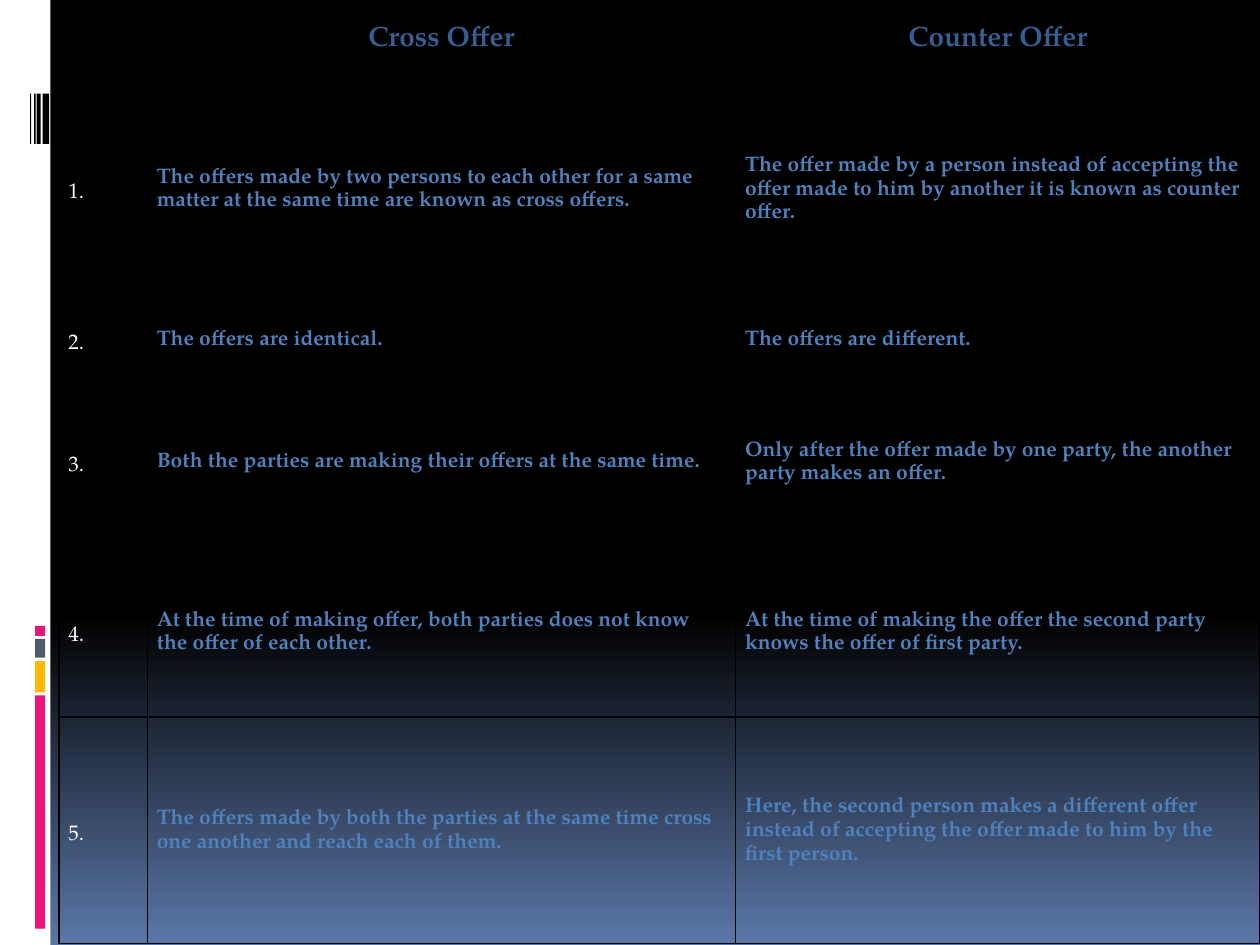
from lxml.etree import SubElement
from pptx import Presentation
from pptx.dml.color import RGBColor
from pptx.enum.shapes import MSO_SHAPE
from pptx.enum.text import MSO_ANCHOR, PP_ALIGN
from pptx.oxml.ns import qn
from pptx.util import Cm, Pt

FONT = "TeX Gyre Pagella"
COLORS = {
    "black": "000000",
    "white": "FFFFFF",
    "glow": "5B77A8",
    "pink": "EA157A",
    "amber": "FEB80A",
    "slate": "4E5B6F",
    "heading": "365F91",
    "body": "4F81BD",
}


def color(name):
    return RGBColor.from_string(COLORS[name])


def add_borders(cell):
    """Draw a 1 pt black line on every side of the cell."""
    properties = cell._tc.get_or_add_tcPr()
    for position, side in enumerate(("a:lnL", "a:lnR", "a:lnT", "a:lnB")):
        line = SubElement(properties, qn(side), w=str(Pt(1)))
        fill = SubElement(line, qn("a:solidFill"))
        SubElement(fill, qn("a:srgbClr"), val=COLORS["black"])
        properties.insert(position, line)


deck = Presentation()
deck.slide_width, deck.slide_height = Cm(25.4), Cm(19.05)
page = deck.slides.add_slide(deck.slide_layouts[6])

# Background: black down to 65 %, then fading to blue
background = page.background.fill
background.gradient()
background.gradient_angle = 270
for stop, name, position in zip(background.gradient_stops, ("black", "glow"), (0.65, 1)):
    stop.color.rgb = color(name)
    stop.position = position

# Side strip with coloured blocks and thin bars: left, top, width, height
blocks = [
    (0, 0, 1.02, 19.05, "white"),
    (0.71, 14.02, 0.2, 4.7, "pink"),
    (0.71, 13.33, 0.2, 0.63, "amber"),
    (0.71, 12.88, 0.2, 0.38, "slate"),
    (0.71, 12.62, 0.2, 0.2, "pink"),
]
bars = [(0.86, 0.13), (0.74, 0.08), (0.69, 0.03), (0.61, 0.02)]
blocks += [(left, 1.89, width, 1.01, "black") for left, width in bars]
for left, top, width, height, name in blocks:
    block = page.shapes.add_shape(
        MSO_SHAPE.RECTANGLE, Cm(left), Cm(top), Cm(width), Cm(height)
    )
    block.shadow.inherit = False
    block.fill.solid()
    block.fill.fore_color.rgb = color(name)
    block.line.fill.background()

# Comparison table
headings = ("", "Cross Offer", "Counter Offer")
comparisons = [
    ("The offers made by two persons to each other for a same matter at the same time "
     "are known as cross offers.",
     "The offer made by a person instead of accepting the offer made to him by another "
     "it is known as counter offer."),
    ("The offers are identical.", "The offers are different."),
    ("Both the parties are making their offers at the same time.",
     "Only after the offer made by one party, the another party makes an offer."),
    ("At the time of making offer, both parties does not know the offer of each other.",
     "At the time of making the offer the second party knows the offer of first party."),
    ("The offers made by both the parties at the same time cross one another and reach "
     "each of them.",
     "Here, the second person makes a different offer instead of accepting the offer "
     "made to him by the first person."),
]
rows = [headings] + [
    (f"{number}.", *pair) for number, pair in enumerate(comparisons, start=1)
]
widths = (1.78, 11.86, 10.57)
heights = (1.52, 4.57, 1.5, 3.43, 3.43, 4.57)

table = page.shapes.add_table(
    len(rows), len(widths), Cm(1.19), Cm(0), Cm(sum(widths)), Cm(sum(heights))
).table
table.first_row = table.horz_banding = False
for column, width in zip(table.columns, widths):
    column.width = Cm(width)
for row, height in zip(table.rows, heights):
    row.height = Cm(height)

for row_index, texts in enumerate(rows):
    for column_index, text in enumerate(texts):
        is_heading, is_number = row_index == 0, column_index == 0
        cell = table.cell(row_index, column_index)
        cell.fill.background()
        add_borders(cell)
        cell.vertical_anchor = MSO_ANCHOR.MIDDLE
        cell.margin_left = cell.margin_right = Cm(0.19)
        cell.margin_top = cell.margin_bottom = 0
        cell.text = text
        para = cell.text_frame.paragraphs[0]
        para.alignment = PP_ALIGN.CENTER if is_heading else PP_ALIGN.LEFT
        para.line_spacing = 1.5 if is_number else 1.15
        para.font.name = FONT
        para.font.size = Pt(16 if is_heading else 12)
        para.font.bold = not is_number
        para.font.color.rgb = color(
            "white" if is_number else "heading" if is_heading else "body"
        )

deck.save("out.pptx")
